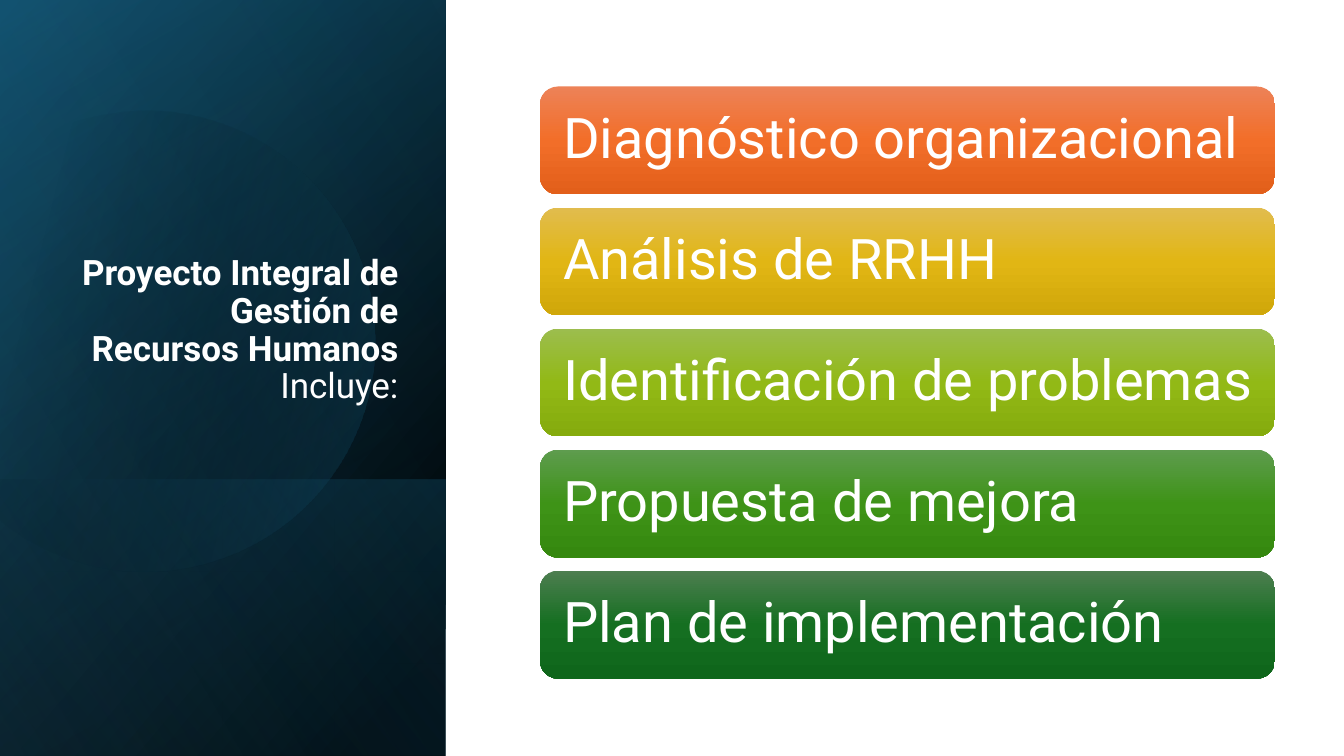
from dataclasses import dataclass
from math import cos, radians, sin

from lxml import etree
from pptx import Presentation
from pptx.dml.color import RGBColor
from pptx.enum.shapes import MSO_SHAPE
from pptx.enum.text import MSO_ANCHOR, MSO_AUTO_SIZE, PP_ALIGN
from pptx.oxml.ns import qn
from pptx.util import Cm, Pt

RECTANGLE = MSO_SHAPE.RECTANGLE
ROUNDED = MSO_SHAPE.ROUNDED_RECTANGLE
BOTTOM, MIDDLE = MSO_ANCHOR.BOTTOM, MSO_ANCHOR.MIDDLE
LEFT, RIGHT = PP_ALIGN.LEFT, PP_ALIGN.RIGHT
NO_AUTOFIT = MSO_AUTO_SIZE.NONE

SLIDE_WIDTH, SLIDE_HEIGHT = 33.87, 19.05
PANEL_WIDTH = 11.23
BAR_LEFT, BAR_TOP, BAR_WIDTH, BAR_HEIGHT, BAR_PITCH = 13.61, 2.18, 18.52, 2.72, 3.05
DISC_CENTRE, DISC_ROTATION = (4.03, 8.5), 343.9
DISC_START = (3.78, 2.79)
DISC_SEGMENTS = [
    [(6.25, 2.84), (8.51, 4.5), (9.22, 6.99)],
    [(10.11, 10.08), (8.33, 13.28), (5.26, 14.17)],
    [(3.33, 14.73), (1.35, 14.25), (-0.08, 13.06)],
    [(-0.38, 12.78)],
    [(-0.38, 4.45)],
    [(0, 4.09)],
    [(0.58, 3.61), (1.27, 3.25), (2.03, 3.02)],
    [(2.62, 2.87), (3.2, 2.79), (3.78, 2.79)],
]
CURVE_STEPS = 24

TITLE = "Proyecto Integral de Gestión de Recursos Humanos"
SUBTITLE = "Incluye:"
COMPONENTS = [
    ("Diagnóstico organizacional", ("ED8257", "F26E29", "E25F1A")),
    ("Análisis de RRHH", ("E1BC4E", "E1B614", "D0A70A")),
    ("Identificación de problemas", ("9CBD4E", "92B916", "85AB0D")),
    ("Propuesta de mejora", ("5E9C4E", "3E9317", "35880F")),
    ("Plan de implementación", ("4D7E50", "156F21", "0F661B")),
]


@dataclass(frozen=True)
class Theme:
    font: str = "Roboto"
    text: str = "FFFFFF"
    black: str = "000000"
    deep_blue: str = "104862"
    blue: str = "156082"
    sky: str = "46B1E1"
    title_size: int = 25
    bar_size: int = 40
    line_spacing: float = 0.9


def curve_points(start, segments):
    points = [start]
    for segment in segments:
        if len(segment) == 1:
            points += segment
            continue
        controls = [points[-1], *segment]
        for step in range(1, CURVE_STEPS + 1):
            t = step / CURVE_STEPS
            weights = ((1 - t) ** 3, 3 * t * (1 - t) ** 2, 3 * t * t * (1 - t), t ** 3)
            points.append(tuple(
                sum(weight * point[axis] for weight, point in zip(weights, controls))
                for axis in (0, 1)))
    return points


def rotate(point, centre, degrees):
    angle = radians(degrees)
    x, y = point[0] - centre[0], point[1] - centre[1]
    return (centre[0] + x * cos(angle) - y * sin(angle),
            centre[1] + x * sin(angle) + y * cos(angle))


class SlideBuilder:
    def __init__(self, slide, theme):
        self.slide = slide
        self.theme = theme

    def gradient(self, shape, stops, angle):
        shape.shadow.inherit = False
        shape.line.fill.background()
        shape.fill.gradient()
        gradient = shape.element.spPr.find(qn("a:gradFill"))
        for child in list(gradient):
            gradient.remove(child)
        stop_list = etree.SubElement(gradient, qn("a:gsLst"))
        for position, color, opacity in stops:
            stop = etree.SubElement(stop_list, qn("a:gs"), pos=str(position * 1000))
            color_element = etree.SubElement(stop, qn("a:srgbClr"), val=color)
            if opacity < 100:
                etree.SubElement(color_element, qn("a:alpha"), val=str(opacity * 1000))
        etree.SubElement(gradient, qn("a:lin"), ang=str(angle * 60000), scaled="0")

    def panel(self, height, stops, angle):
        shape = self.slide.shapes.add_shape(
            RECTANGLE, Cm((PANEL_WIDTH - height) / 2),
            Cm(SLIDE_HEIGHT - (height + PANEL_WIDTH) / 2), Cm(height), Cm(PANEL_WIDTH))
        shape.rotation = 90
        shape.element.spPr.get_or_add_xfrm().set("flipH", "1")
        self.gradient(shape, stops, angle)

    def disc(self, stops, angle):
        points = [rotate(point, DISC_CENTRE, -DISC_ROTATION)
                  for point in curve_points(DISC_START, DISC_SEGMENTS)]
        outline = [(Cm(x), Cm(y)) for x, y in points]
        builder = self.slide.shapes.build_freeform(*outline[0])
        builder.add_line_segments(outline[1:], close=True)
        shape = builder.convert_to_shape()
        shape.rotation = DISC_ROTATION
        self.gradient(shape, stops, angle)

    def format_text(self, shape, size, alignment, anchor, margins):
        frame = shape.text_frame
        frame.word_wrap = True
        frame.auto_size = NO_AUTOFIT
        frame.vertical_anchor = anchor
        frame.margin_left, frame.margin_top, frame.margin_right, frame.margin_bottom = (
            Cm(margin) for margin in margins)
        paragraph = frame.paragraphs[0]
        paragraph.alignment = alignment
        paragraph.line_spacing = self.theme.line_spacing
        for run in paragraph.runs:
            run.font.name = self.theme.font
            run.font.size = Pt(size)
            run.font.color.rgb = RGBColor.from_string(self.theme.text)
        return paragraph.runs

    def title(self, heading, subtitle):
        shape = self.slide.shapes.title
        self.slide.shapes.element.append(shape.element)
        shape.left, shape.top, shape.width, shape.height = (
            Cm(1.63), Cm(4.67), Cm(8.66), Cm(6.65))
        shape.text_frame.text = f"{heading}\v{subtitle}"
        heading_run, subtitle_run = self.format_text(
            shape, self.theme.title_size, RIGHT, BOTTOM, (0.33, 0.13, 0.25, 1.08))
        heading_run.font.bold = True
        subtitle_run.font.bold = False

    def bar(self, row, label, colors):
        shape = self.slide.shapes.add_shape(
            ROUNDED, Cm(BAR_LEFT), Cm(BAR_TOP + row * BAR_PITCH),
            Cm(BAR_WIDTH), Cm(BAR_HEIGHT))
        self.gradient(shape, [(position, color, 100)
                              for position, color in zip((0, 50, 100), colors)], 90)
        shape.text_frame.text = label
        self.format_text(shape, self.theme.bar_size, LEFT, MIDDLE, (0.45, 0.43, 0.2, 0.43))


def main():
    presentation = Presentation()
    presentation.slide_width = Cm(SLIDE_WIDTH)
    presentation.slide_height = Cm(SLIDE_HEIGHT)
    theme = Theme()
    builder = SlideBuilder(
        presentation.slides.add_slide(presentation.slide_layouts[5]), theme)

    builder.panel(SLIDE_HEIGHT, [(8, theme.black, 100), (100, theme.deep_blue, 100)], 50)
    builder.panel(SLIDE_HEIGHT, [(0, theme.black, 0), (99, theme.blue, 46)], 30)
    builder.panel(6.96, [(2, theme.blue, 29), (100, theme.black, 30)], 130)
    builder.disc([(29, theme.black, 0), (100, theme.blue, 43)], 30)
    builder.panel(SLIDE_HEIGHT, [(0, theme.black, 0), (99, theme.sky, 11)], 120)
    builder.title(TITLE, SUBTITLE)
    for row, (label, colors) in enumerate(COMPONENTS):
        builder.bar(row, label, colors)

    presentation.save("out.pptx")


if __name__ == "__main__":
    main()
